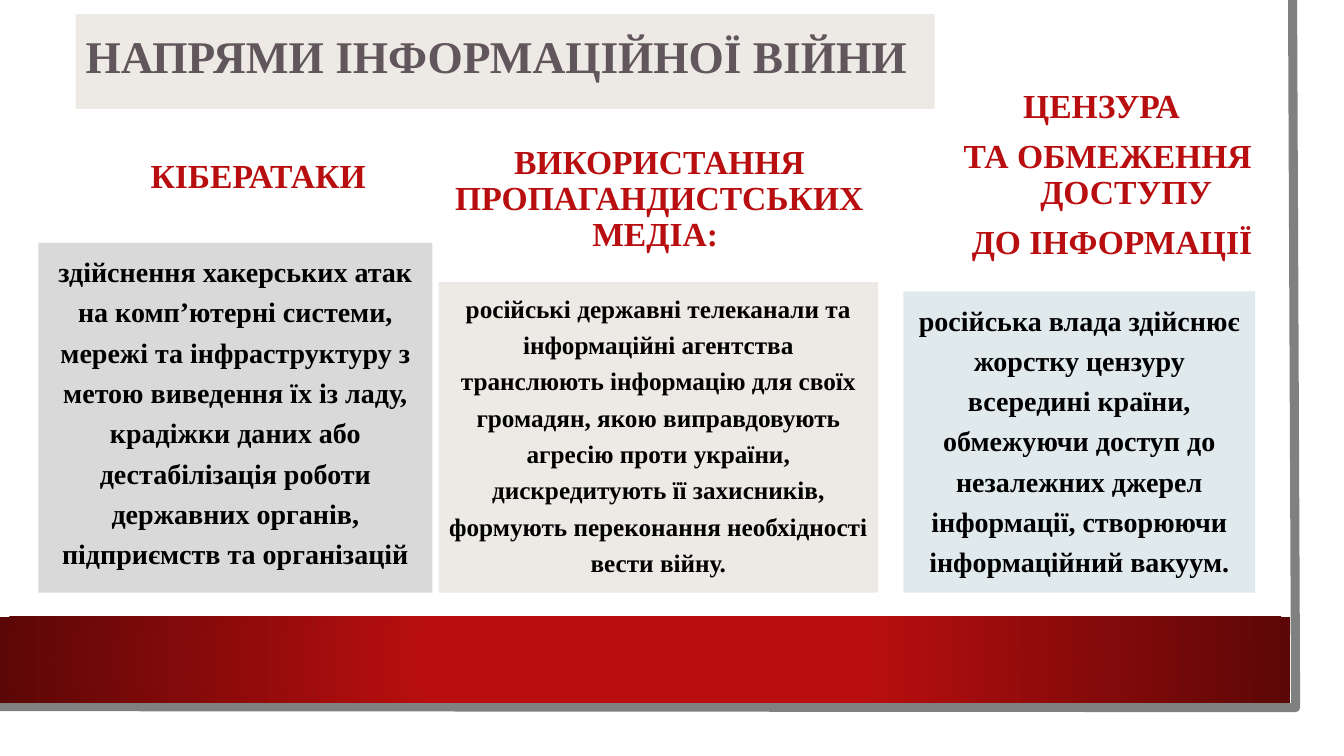
import pptx
import pptx.util
import pptx.dml.color
import pptx.enum.shapes
import pptx.enum.text
import lxml.etree

SLIDE_SIZE = (13.33, 7.5)
FONT = "Times New Roman"
RED, DARK_RED, BLACK = "B80E0F", "5C0707", "000000"
GREY, SAND, SILVER, MIST = "808080", "EDEAE5", "D9D9D9", "E0EAEC"
FLOOR = 5.88

TITLE = ("НАПРЯМИ ІНФОРМАЦІЙНОЇ ВІЙНИ", (0.75, 0.14, 8.52, 0.94))

DIRECTIONS = [
    {
        "heading": [("КІБЕРАТАКИ", None)],
        "heading_box": (0.75, 1.5, 3.62, 0.49),
        "text": "здійснення хакерських атак на комп’ютерні системи, мережі та "
                "інфраструктуру з метою виведення їх із ладу, крадіжки даних або "
                "дестабілізація роботи державних органів, підприємств та організацій",
        "card": (0.38, 2.41, 3.91), "fill": SILVER, "size": 20,
    },
    {
        "heading": [("ВИКОРИСТАННЯ ПРОПАГАНДИСТСЬКИХ МЕДІА: ", None)],
        "heading_box": (4.37, 1.24, 4.34, 1.33),
        "text": "російські державні телеканали та інформаційні агентства транслюють "
                "інформацію для своїх громадян, якою виправдовують агресію проти україни, "
                "дискредитують її захисників, формують переконання необхідності вести війну.",
        "card": (4.35, 2.8, 4.36), "fill": SAND, "size": 18,
    },
    {
        "heading": [("ЦЕНЗУРА", (1.09, 0)),
                    ("ТА ОБМЕЖЕННЯ ДОСТУПУ", (1.26, -0.76)),
                    ("ДО ІНФОРМАЦІЇ", (0.58, 0))],
        "heading_box": (8.96, 1.24, 3.75, 1.41),
        "text": "російська влада здійснює жорстку цензуру всередині країни, обмежуючи "
                "доступ до незалежних джерел інформації, створюючи інформаційний вакуум.",
        "card": (8.96, 2.89, 3.49), "fill": MIST, "size": 20,
    },
]

ANCHOR = pptx.enum.text.MSO_ANCHOR
ALIGN = pptx.enum.text.PP_ALIGN
inch = pptx.util.Inches


def color(value):
    return pptx.dml.color.RGBColor.from_string(value)


def add_block(slide, box, fill):
    block = slide.shapes.add_shape(
        pptx.enum.shapes.MSO_SHAPE.RECTANGLE, *map(inch, box))
    block.shadow.inherit = False
    block.line.fill.background()
    block.fill.solid()
    block.fill.fore_color.rgb = color(fill)
    return block


def write(shape, lines, size, ink, anchor, spacing, centred=True):
    frame = shape.text_frame
    frame.word_wrap = True
    frame.vertical_anchor = anchor
    for number, (text, indents) in enumerate(lines):
        paragraph = frame.add_paragraph() if number else frame.paragraphs[0]
        paragraph.text = text
        paragraph.line_spacing = spacing
        if number:
            paragraph.space_before = pptx.util.Pt(10)
        paragraph.alignment = ALIGN.CENTER if centred and not indents else ALIGN.LEFT
        if indents:
            properties = paragraph._p.get_or_add_pPr()
            for key, length in zip(("marL", "indent"), indents):
                properties.set(key, str(int(inch(length))))
        paragraph.font.name = FONT
        paragraph.font.size = pptx.util.Pt(size)
        paragraph.font.bold = True
        paragraph.font.color.rgb = color(ink)


def add_frame(slide):
    builder = slide.shapes.build_freeform(inch(12.82), 0)
    builder.add_line_segments(
        [(inch(12.85), inch(7.02)), (inch(-0.03), inch(7.01))], close=False)
    edge = builder.convert_to_shape()
    edge.shadow.inherit = False
    edge.fill.background()
    edge.line.color.rgb = color(GREY)
    edge.line.width = pptx.util.Pt(6.5)


def add_band(slide):
    band = add_block(slide, (0, 6.12, 12.8, 0.85), RED)
    band.fill.gradient()
    for stop, (position, shade) in zip(
            band.fill.gradient_stops, [(0.34, RED), (1, DARK_RED)]):
        stop.position = position
        stop.color.rgb = color(shade)
    gradient = band.fill._fill._gradFill
    namespace = "{http://schemas.openxmlformats.org/drawingml/2006/main}"
    gradient.remove(gradient.find(namespace + "lin"))
    radial = lxml.etree.SubElement(gradient, namespace + "path", {"path": "circle"})
    lxml.etree.SubElement(
        radial, namespace + "fillToRect", dict.fromkeys("ltrb", "50000"))


def main():
    deck = pptx.Presentation()
    deck.slide_width, deck.slide_height = map(inch, SLIDE_SIZE)
    slide = deck.slides.add_slide(deck.slide_layouts[6])
    add_frame(slide)
    add_band(slide)

    title_text, title_box = TITLE
    title = add_block(slide, title_box, SAND)
    write(title, [(title_text, None)], 32.4, "60565B", ANCHOR.MIDDLE, 0.9, centred=False)
    title.text_frame.margin_bottom = inch(0.1)

    for direction in DIRECTIONS:
        heading = slide.shapes.add_textbox(*map(inch, direction["heading_box"]))
        write(heading, direction["heading"], 24, RED, ANCHOR.BOTTOM, 0.9)
        left, top, width = direction["card"]
        card = add_block(slide, (left, top, width, FLOOR - top), direction["fill"])
        write(card, [(direction["text"], None)], direction["size"], BLACK, ANCHOR.TOP, 1.2)

    deck.save("out.pptx")


if __name__ == "__main__":
    main()
